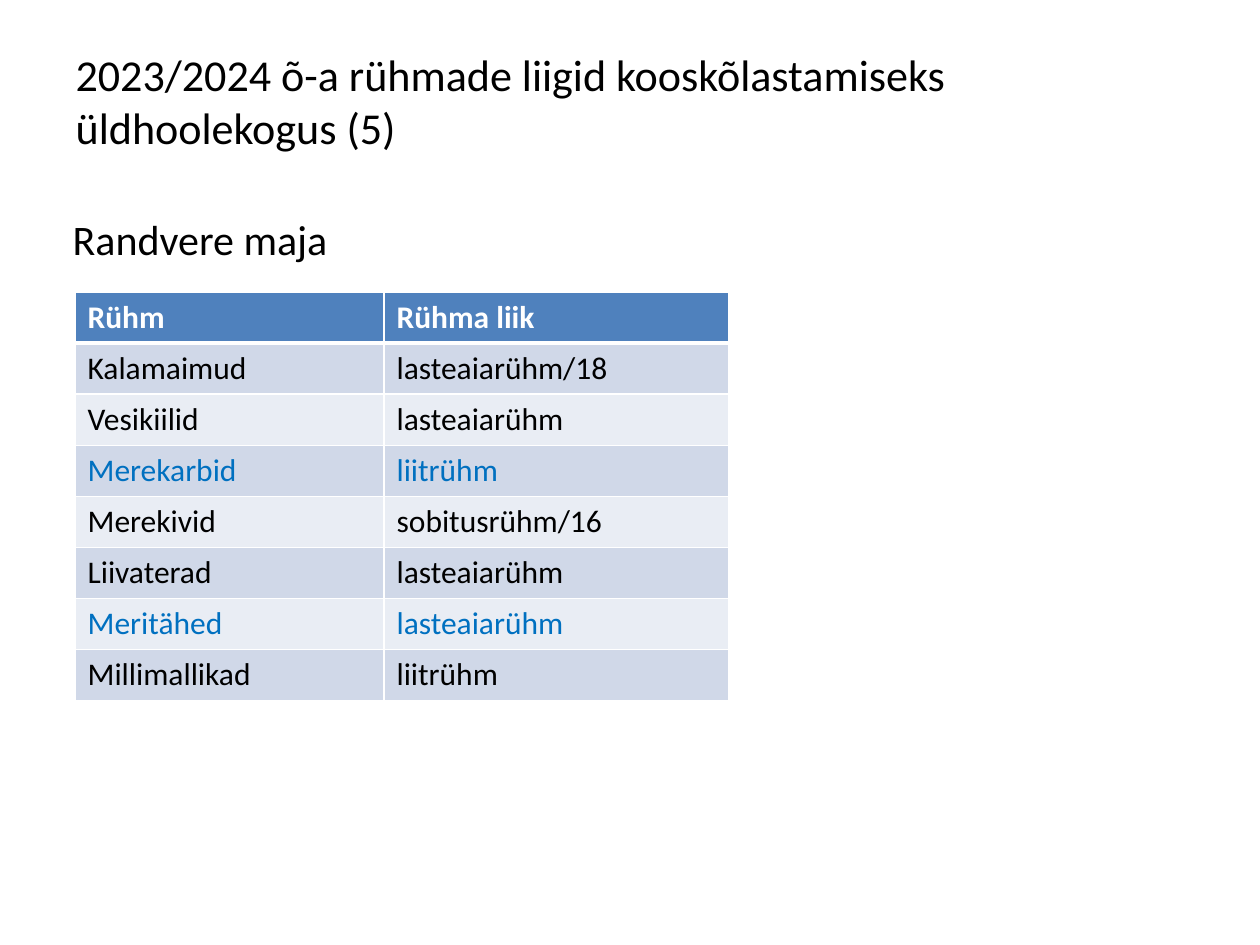
from lxml import etree
from pptx import Presentation
from pptx import util as u
from pptx.dml.color import RGBColor
from pptx.enum import text
from pptx.oxml.ns import qn

PX = 914400 / 126
COLORS = {
    "black": "000000",
    "white": "FFFFFF",
    "header": "4F81BD",
    "band_dark": "D0D8E8",
    "band_light": "E9EDF4",
    "highlight": "0070C0",
}
HEADINGS = ("Rühm", "Rühma liik")
GROUPS = [
    ("Kalamaimud", "lasteaiarühm/18"),
    ("Vesikiilid", "lasteaiarühm"),
    ("Merekarbid", "liitrühm"),
    ("Merekivid", "sobitusrühm/16"),
    ("Liivaterad", "lasteaiarühm"),
    ("Meritähed", "lasteaiarühm"),
    ("Millimallikad", "liitrühm"),
]
HIGHLIGHTED = {"Merekarbid", "Meritähed"}


def px(length):
    return u.Emu(round(length * PX))


def write(frame, words, size=18, color="black", bold=False):
    paragraph = frame.paragraphs[0]
    paragraph.alignment = text.PP_ALIGN.LEFT
    paragraph.space_before = u.Pt(0)
    run = paragraph.add_run()
    run.text = words
    run.font.name = "Calibri"
    run.font.size = u.Pt(size)
    run.font.bold = bold
    run.font.color.rgb = RGBColor.from_string(COLORS[color])
    return paragraph


def set_borders(cell, color="white", bottom=1):
    """Rule all four sides at 1 pt, with its own width below."""
    properties = cell._tc.get_or_add_tcPr()
    widths = {"a:lnL": 1, "a:lnR": 1, "a:lnT": 1, "a:lnB": bottom}
    for position, (side, width) in enumerate(widths.items()):
        line = etree.Element(qn(side), w=str(u.Pt(width)))
        fill = etree.SubElement(line, qn("a:solidFill"))
        etree.SubElement(fill, qn("a:srgbClr"), val=COLORS[color])
        properties.insert(position, line)


class SlideBuilder:
    def __init__(self, presentation):
        self.slide = presentation.slides.add_slide(presentation.slide_layouts[1])

    def place(self, shape, left, top, width, height):
        shape.left, shape.top = px(left), px(top)
        shape.width, shape.height = px(width), px(height)
        shape.text_frame.word_wrap = True
        shape.text_frame.auto_size = text.MSO_AUTO_SIZE.NONE
        return shape.text_frame

    def title(self, words, box, size, margin_bottom):
        frame = self.place(self.slide.shapes.title, *box)
        frame.vertical_anchor = text.MSO_ANCHOR.MIDDLE
        frame.margin_bottom = px(margin_bottom)
        write(frame, words, size)

    def body(self, words, box, size, margin_top):
        frame = self.place(self.slide.placeholders[1], *box)
        frame.margin_top = px(margin_top)
        properties = frame.paragraphs[0]._p.get_or_add_pPr()
        properties.set("marL", "0")
        properties.set("indent", "0")
        etree.SubElement(properties, qn("a:buNone"))
        write(frame, words, size)

    def table(self, rows, left, top, widths, row_height):
        table = self.slide.shapes.add_table(
            len(rows), len(widths), px(left), px(top),
            px(sum(widths)), px(row_height * len(rows))).table
        for column, width in zip(table.columns, widths):
            column.width = px(width)
        for row_index, row in enumerate(rows):
            header = row_index == 0
            if header:
                fill, color = "header", "white"
            else:
                fill = "band_dark" if row_index % 2 else "band_light"
                color = "highlight" if row[0] in HIGHLIGHTED else "black"
            for column_index, words in enumerate(row):
                cell = table.cell(row_index, column_index)
                cell.fill.solid()
                cell.fill.fore_color.rgb = RGBColor.from_string(COLORS[fill])
                set_borders(cell, bottom=3 if header else 1)
                write(cell.text_frame, words, color=color, bold=header)


def main():
    presentation = Presentation()
    presentation.slide_width, presentation.slide_height = px(1260), px(945)
    builder = SlideBuilder(presentation)
    builder.title("2023/2024 õ-a rühmade liigid kooskõlastamiseks üldhoolekogus (5)",
                  (63, 38, 1134, 147), size=25.2, margin_bottom=28)
    builder.body("Randvere maja", (60, 145, 1134, 707), size=24, margin_top=68)
    builder.table([HEADINGS, *GROUPS], 75, 292, (309, 345), 51)
    presentation.save("out.pptx")


if __name__ == "__main__":
    main()
